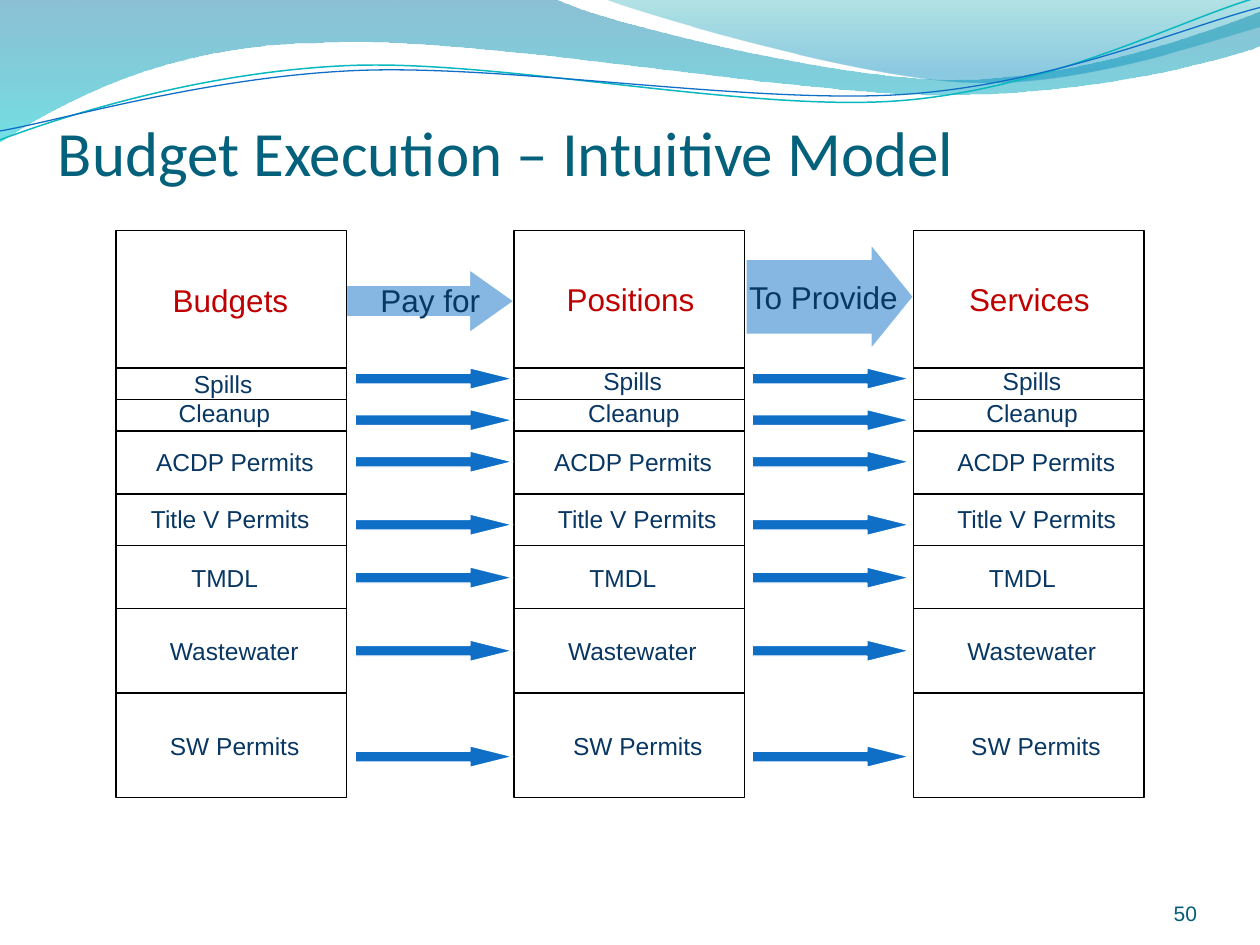
from dataclasses import dataclass
from math import cos, radians, sin

from lxml import etree
from pptx import Presentation
from pptx.dml.color import RGBColor
from pptx.enum import shapes, text
from pptx.oxml import parse_xml
from pptx.oxml.ns import nsdecls, qn
from pptx.util import Inches, Pt

Point = tuple[float, float]
Box = tuple[float, float, float, float]
Segment = tuple[Point, ...]


@dataclass(frozen=True)
class Theme:
    title: str = "04617B"
    number: str = "045D75"
    heading: str = "C00000"
    body: str = "083763"
    arrow: str = "0F6FC6"
    teal: str = "0AB8BF"
    rule: str = "000000"
    edge: str = "FFFFFF"
    heading_font: str = "Calibri"
    body_font: str = "Arial"
    title_size: float = 36
    heading_size: float = 18
    label_size: float = 14
    number_size: float = 12
    rule_width: float = 0.75


@dataclass(frozen=True)
class Stop:
    position: int
    color: str
    alpha: int


@dataclass(frozen=True)
class Wave:
    start: Point
    segments: tuple[Segment, ...]
    stops: tuple[Stop, ...] = ()
    color: str = ""
    width: float = 0
    center: Point = (0, 0)
    tilt: float = 0


@dataclass(frozen=True)
class Program:
    label: str
    rule_top: float
    arrow_top: float
    label_top: float
    insets: tuple[float, float, float]
    width: float
    first_drop: float = 0


@dataclass(frozen=True)
class Column:
    heading: str
    left: float
    heading_box: Box


@dataclass(frozen=True)
class Link:
    label: str
    label_box: Box
    arrow_box: Box
    adjustments: tuple[float, float]
    small_left: float


THEME = Theme()
COLUMN_TOP, COLUMN_WIDTH, COLUMN_HEIGHT = 1.83, 1.83, 4.5

WAVES = (
    Wave((0, -0.01), (((4.4, -0.01),),
                      ((4.76, 0.17), (6.64, 0.63), (7.58, 0.63)),
                      ((8.53, 0.63), (9.58, 0.26), (10, 0.09)),
                      ((10.01, 0.36),),
                      ((9.83, 0.44), (8.7, 0.76), (7.46, 0.75)),
                      ((6.22, 0.75), (3.82, 0.28), (2.57, 0.34)),
                      ((1.29, 0.35), (0.46, 0.83), (-0.01, 1.13))),
         stops=(Stop(0, "0074A1", 45), Stop(100, "00C6CF", 55))),
    Wave((4.79, -0.01), (((5.09, 0.11), (6.82, 0.62), (7.69, 0.65)),
                         ((8.56, 0.69), (9.61, 0.32), (10, 0.21)),
                         ((10, 0),)),
         stops=(Stop(0, "00A1A9", 30), Stop(80, "008BBF", 45))),
    Wave((0, 1.11), (((0.48, 0.93), (1.58, 0.57), (2.77, 0.52)),
                     ((3.95, 0.47), (5.93, 0.89), (7.13, 0.8)),
                     ((8.33, 0.71), (9.38, 0.15), (9.98, -0.02))),
         color=THEME.teal, width=0.85, center=(4.99, 0.58), tilt=-2.7),
    Wave((0, 1.04), (((0.47, 0.96), (1.64, 0.61), (2.83, 0.56)),
                     ((4.03, 0.51), (5.97, 0.83), (7.17, 0.75)),
                     ((8.36, 0.67), (9.41, 0.21), (10, 0.06))),
         color=THEME.arrow, width=0.75, center=(5, 0.59), tilt=-2.7),
)

COLUMNS = (
    Column("Budgets", 0.92, (1.08, 2.18, 1.5, 0.4)),
    Column("Positions", 4.08, (4.17, 2.17, 1.67, 0.4)),
    Column("Services", 7.25, (7.42, 2.17, 1.5, 0.4)),
)

LINKS = (
    Link("To Provide ", (5.78, 2.16, 1.58, 0.4), (5.92, 1.94, 1.33, 0.83), (0.718, 0.405), 5.97),
    Link("Pay for", (2.58, 2.18, 1.67, 0.4), (2.75, 2.14, 1.33, 0.5), (0.5, 0.705), 2.82),
)

PROGRAMS = (
    Program("Spills", 2.92, 2.92, 2.86, (0.52, 0.61, 0.61), 0.67, 0.02),
    Program("Cleanup", 3.17, 3.25, 3.11, (0.4, 0.49, 0.48), 0.93),
    Program("ACDP Permits", 3.42, 3.58, 3.5, (0.22, 0.22, 0.25), 1.46),
    Program("Title V Permits", 3.92, 4.08, 3.95, (0.18, 0.25, 0.25), 1.47),
    Program("TMDL", 4.33, 4.5, 4.42, (0.5, 0.5, 0.5), 0.75),
    Program("Wastewater", 4.83, 5.08, 5, (0.33, 0.33, 0.33), 1.28),
    Program("SW Permits", 5.5, 5.92, 5.75, (0.33, 0.37, 0.36), 1.24),
)


def level(point: Point, wave: Wave) -> tuple[int, int]:
    angle = radians(-wave.tilt)
    dx, dy = point[0] - wave.center[0], point[1] - wave.center[1]
    return (Inches(wave.center[0] + dx * cos(angle) - dy * sin(angle)),
            Inches(wave.center[1] + dx * sin(angle) + dy * cos(angle)))


def bend(shape, segments: tuple[Segment, ...]) -> None:
    lines = iter(list(shape._element.spPr.iter(qn("a:lnTo"))))
    for segment in segments:
        group = [next(lines) for _ in segment]
        if len(group) == 3:
            group[0].tag = qn("a:cubicBezTo")
            for line in group[1:]:
                group[0].append(line[0])
                line.getparent().remove(line)


def draw_wave(slide, wave: Wave) -> None:
    builder = slide.shapes.build_freeform(*level(wave.start, wave), scale=1.0)
    builder.add_line_segments([level(point, wave) for segment in wave.segments
                               for point in segment], close=bool(wave.stops))
    shape = builder.convert_to_shape()
    bend(shape, wave.segments)
    shape.rotation = wave.tilt
    shape.shadow.inherit = False
    if not wave.stops:
        shape.fill.background()
        shape.line.color.rgb = RGBColor.from_string(wave.color)
        shape.line.width = Pt(wave.width)
        return
    shape.line.fill.background()
    stops = "".join(
        f'<a:gs pos="{stop.position * 1000}"><a:srgbClr val="{stop.color}">'
        f'<a:alpha val="{stop.alpha * 1000}"/></a:srgbClr></a:gs>' for stop in wave.stops)
    shape._element.spPr.find(qn("a:custGeom")).addnext(parse_xml(
        f'<a:gradFill {nsdecls("a")}><a:gsLst>{stops}</a:gsLst>'
        '<a:lin ang="5400000" scaled="0"/></a:gradFill>'))


def draw_text(slide, words: str, box: Box, size: float, color: str, *,
              font: str = THEME.body_font, align=None, wrap: bool = True,
              insets: Box | None = None) -> None:
    frame = slide.shapes.add_textbox(*map(Inches, box)).text_frame
    frame.word_wrap = wrap
    if insets:
        frame.vertical_anchor = text.MSO_ANCHOR.BOTTOM
        (frame.margin_left, frame.margin_top,
         frame.margin_right, frame.margin_bottom) = map(Inches, insets)
    else:
        frame.auto_size = text.MSO_AUTO_SIZE.SHAPE_TO_FIT_TEXT
    paragraph = frame.paragraphs[0]
    paragraph.text = words
    paragraph.alignment = align
    paragraph.font.name = font
    paragraph.font.size = Pt(size)
    paragraph.font.color.rgb = RGBColor.from_string(color)


def draw_heading(slide, words: str, box: Box, color: str) -> None:
    draw_text(slide, words, box, THEME.heading_size, color, align=text.PP_ALIGN.CENTER)


def draw_shape(slide, kind, box: Box, line: str):
    shape = slide.shapes.add_shape(kind, *map(Inches, box))
    shape.shadow.inherit = False
    shape.fill.background()
    shape.line.color.rgb = RGBColor.from_string(line)
    shape.line.width = Pt(THEME.rule_width)
    return shape


def draw_arrow(slide, box: Box, adjustments: tuple[float, float], alpha: int = 100) -> None:
    arrow = draw_shape(slide, shapes.MSO_SHAPE.RIGHT_ARROW, box, THEME.edge)
    arrow.adjustments[0], arrow.adjustments[1] = adjustments
    arrow.fill.solid()
    arrow.fill.fore_color.rgb = RGBColor.from_string(THEME.arrow)
    if alpha < 100:
        color = arrow._element.spPr.find(qn("a:solidFill")).find(qn("a:srgbClr"))
        etree.SubElement(color, qn("a:alpha")).set("val", str(alpha * 1000))


def draw_rule(slide, left: float, top: float) -> None:
    rule = slide.shapes.add_connector(shapes.MSO_CONNECTOR.STRAIGHT, Inches(left), Inches(top),
                                      Inches(left + COLUMN_WIDTH), Inches(top))
    rule.line.color.rgb = RGBColor.from_string(THEME.rule)
    rule.line.width = Pt(THEME.rule_width)
    etree.SubElement(rule._element.spPr, qn("a:effectLst"))


def draw_column(slide, index: int, column: Column) -> None:
    draw_shape(slide, shapes.MSO_SHAPE.RECTANGLE,
               (column.left, COLUMN_TOP, COLUMN_WIDTH, COLUMN_HEIGHT), THEME.rule)
    draw_heading(slide, column.heading, column.heading_box, THEME.heading)
    for program in PROGRAMS:
        draw_rule(slide, column.left, program.rule_top)
        top = program.label_top + (program.first_drop if index == 0 else 0)
        draw_text(slide, program.label, (column.left + program.insets[index], top,
                  program.width, 0.34), THEME.label_size, THEME.body, wrap=False)


def main() -> None:
    """Build the budget execution slide."""
    deck = Presentation()
    deck.slide_width, deck.slide_height = Inches(10), Inches(7.5)
    slide = deck.slides.add_slide(deck.slide_layouts[6])
    for wave in WAVES:
        draw_wave(slide, wave)
    for link in LINKS:
        draw_arrow(slide, link.arrow_box, link.adjustments, alpha=50)
    draw_text(slide, "Budget Execution – Intuitive Model", (0.46, 0.25, 9, 1.25),
              THEME.title_size, THEME.title, font=THEME.heading_font, insets=(0, 0.05, 0, 0))
    draw_text(slide, "50", (8.67, 6.95, 0.83, 0.4), THEME.number_size, THEME.number,
              align=text.PP_ALIGN.RIGHT, insets=(0, 0, 0, 0))
    for index, column in enumerate(COLUMNS):
        draw_column(slide, index, column)
    for link in LINKS:
        draw_heading(slide, link.label, link.label_box, THEME.body)
        for program in PROGRAMS:
            draw_arrow(slide, (link.small_left, program.arrow_top, 1.25, 0.17), (0.5, 2))
    deck.save("out.pptx")


if __name__ == "__main__":
    main()
